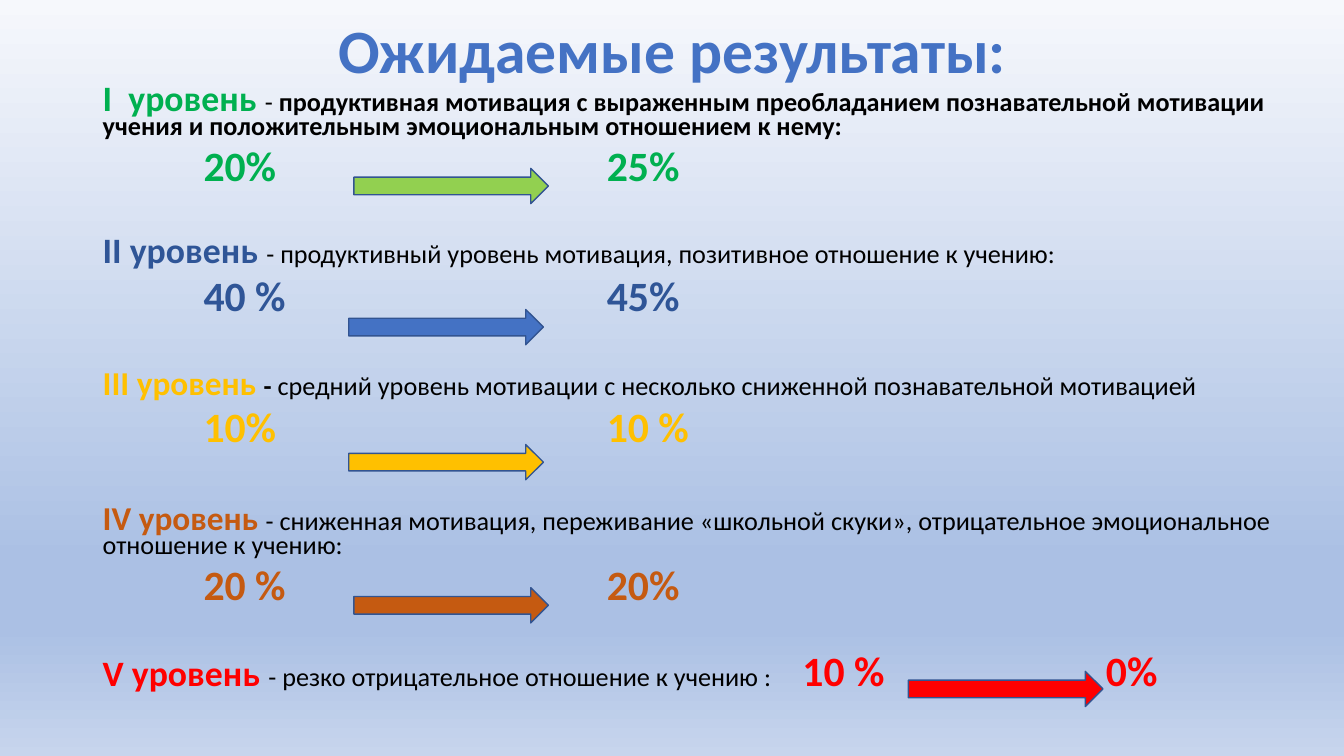
from dataclasses import dataclass

from lxml import etree
from pptx import Presentation
from pptx.dml.color import RGBColor
from pptx.enum.shapes import MSO_SHAPE
from pptx.enum.text import MSO_ANCHOR, PP_ALIGN
from pptx.oxml.ns import qn
from pptx.util import Inches, Pt

RIGHT_ARROW = MSO_SHAPE.RIGHT_ARROW
MIDDLE = MSO_ANCHOR.MIDDLE
CENTER = PP_ALIGN.CENTER


@dataclass(frozen=True)
class Theme:
    font: str = "Calibri"
    title_color: str = "4472C4"
    text_color: str = "000000"
    arrow_outline: str = "325491"
    background: tuple = ((0, "F6F8FC"), (74, "ABC0E4"), (83, "ABC0E4"), (100, "C7D5ED"))
    title_size: float = 44
    description_size: float = 18.7
    value_size: float = 29.8
    line_spacing: float = 0.7
    paragraph_gap: float = 10


@dataclass(frozen=True)
class Level:
    name: str
    description: str
    before: str
    after: str
    color: str
    arrow_color: str
    arrow_left: float
    arrow_top: float
    name_size: float = 25.5
    gap: float = 36
    dash_bold: bool = False
    description_bold: bool = False
    one_line: bool = False


THEME = Theme()
VALUE_STOPS = (1, 5)
ONE_LINE_STOPS = (6.94, 9.95)
LEVELS = (
    Level("I  уровень ",
          "продуктивная мотивация с выраженным преобладанием познавательной мотивации "
          "учения и положительным эмоциональным отношением к нему:",
          "20%", "25%", "00B050", "92D050", 3.51, 1.67, gap=10, description_bold=True),
    Level("II уровень ",
          "продуктивный уровень мотивация, позитивное отношение к учению:",
          "40 %", "45%", "2F5597", "4472C4", 3.46, 3.07),
    Level("III уровень ",
          "средний уровень мотивации с несколько сниженной познавательной мотивацией",
          "10%", "10 %", "FFC000", "FFC000", 3.46, 4.41, name_size=23.8, gap=39,
          dash_bold=True),
    Level("IV уровень ",
          "сниженная мотивация, переживание «школьной скуки», отрицательное "
          "эмоциональное отношение к учению:",
          "20 %", "20%", "C55A11", "C55A11", 3.51, 5.83, name_size=23.8, gap=42),
    Level("V уровень ", "резко отрицательное отношение к учению :",
          "10 %", "0%", "FF0000", "FF0000", 9.01, 6.66, one_line=True),
)


def paint_background(slide) -> None:
    fill = slide.background.fill
    fill.gradient()
    fill.gradient_angle = 270
    stops = next(slide.element.iter(qn("a:gsLst")))
    for stop in list(stops):
        stops.remove(stop)
    for percent, color in THEME.background:
        stop = etree.SubElement(stops, qn("a:gs"), pos=str(percent * 1000))
        etree.SubElement(stop, qn("a:srgbClr"), val=color)


def add_run(paragraph, text: str, size: float, color: str, bold: bool) -> None:
    run = paragraph.add_run()
    run.text = text
    run.font.size = Pt(size)
    run.font.bold = bold
    run.font.color.rgb = RGBColor.from_string(color)


def format_paragraph(paragraph, gap: float, stops: tuple = ()) -> None:
    """Set spacing, left tab stops (inches) and font."""
    paragraph.line_spacing = THEME.line_spacing
    paragraph.space_before = Pt(gap)
    if stops:
        tabs = etree.SubElement(paragraph._p.get_or_add_pPr(), qn("a:tabLst"))
        for stop in stops:
            etree.SubElement(tabs, qn("a:tab"), pos=str(Inches(stop)), algn="l")
    paragraph.font.name = THEME.font


def add_title(slide) -> None:
    title = slide.shapes.title
    title.left, title.top = Inches(0.92), Inches(0.25)
    title.width, title.height = Inches(11.5), Inches(0.57)
    title.text_frame.vertical_anchor = MIDDLE
    heading = title.text_frame.paragraphs[0]
    heading.alignment = CENTER
    heading.line_spacing = 0.9
    heading.font.name = THEME.font
    add_run(heading, "Ожидаемые результаты:", THEME.title_size, THEME.title_color, True)


def write_level(frame, level: Level, heading) -> None:
    format_paragraph(heading, level.gap, ONE_LINE_STOPS if level.one_line else ())
    add_run(heading, level.name, level.name_size, level.color, True)
    add_run(heading, "- ", THEME.description_size, THEME.text_color, level.dash_bold)
    add_run(heading, level.description, THEME.description_size, THEME.text_color,
            level.description_bold)
    values = heading
    if not level.one_line:
        values = frame.add_paragraph()
        format_paragraph(values, THEME.paragraph_gap, VALUE_STOPS)
    add_run(values, f"\t{level.before}\t{level.after}", THEME.value_size, level.color, True)


def add_arrow(slide, level: Level) -> None:
    arrow = slide.shapes.add_shape(RIGHT_ARROW, Inches(level.arrow_left),
                                   Inches(level.arrow_top), Inches(1.93), Inches(0.35))
    arrow.shadow.inherit = False
    arrow.fill.solid()
    arrow.fill.fore_color.rgb = RGBColor.from_string(level.arrow_color)
    arrow.line.color.rgb = RGBColor.from_string(THEME.arrow_outline)
    arrow.line.width = Pt(1)


def main() -> None:
    presentation = Presentation()
    presentation.slide_width, presentation.slide_height = Inches(13.33), Inches(7.5)
    slide = presentation.slides.add_slide(presentation.slide_layouts[5])
    paint_background(slide)
    add_title(slide)
    body = slide.shapes.add_textbox(Inches(0.92), Inches(0.82), Inches(12.08), Inches(6.55))
    frame = body.text_frame
    frame.word_wrap = True
    for index, level in enumerate(LEVELS):
        write_level(frame, level, frame.add_paragraph() if index else frame.paragraphs[0])
        add_arrow(slide, level)
    presentation.save("out.pptx")


if __name__ == "__main__":
    main()
